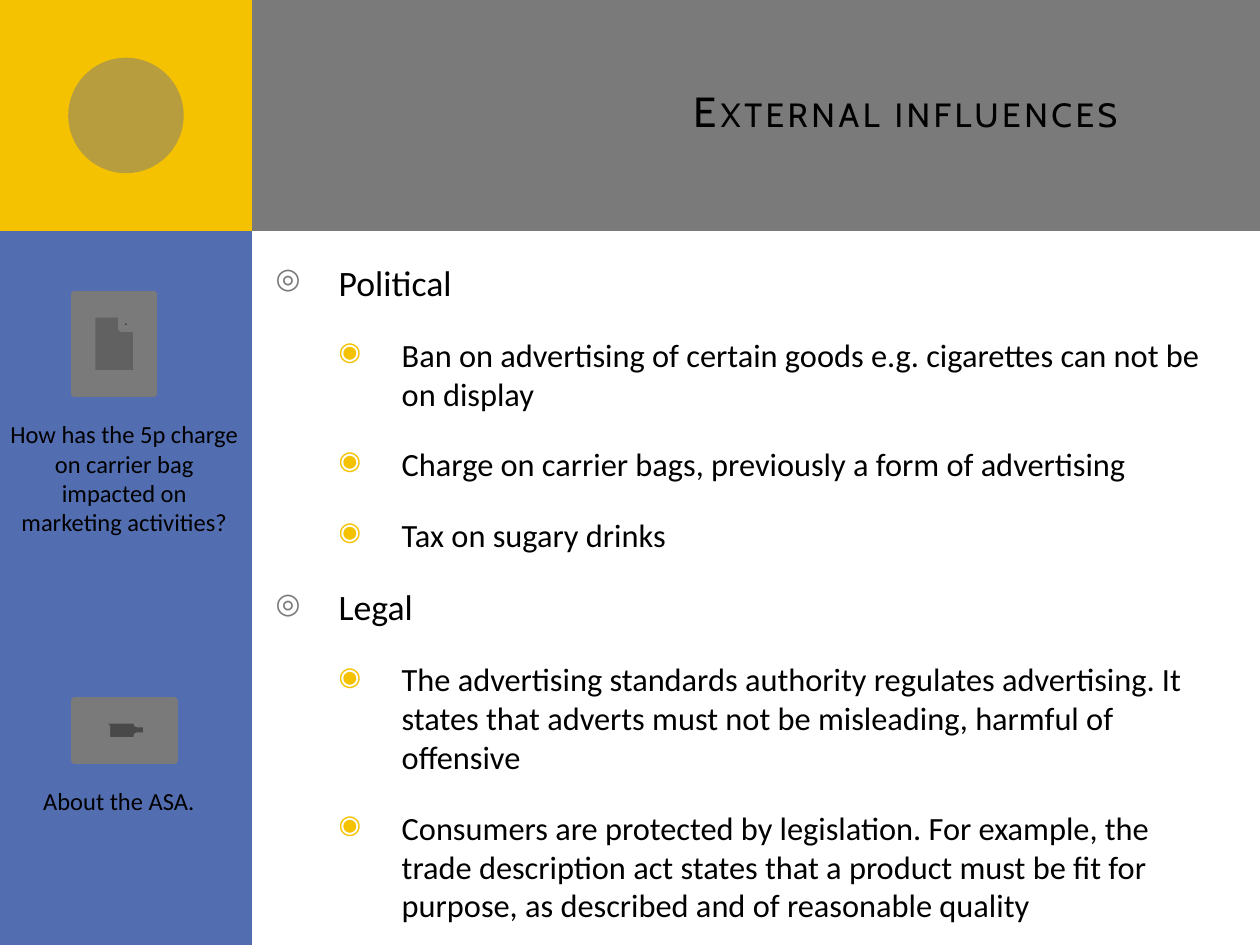
from lxml.etree import SubElement
from pptx import Presentation
from pptx.dml.color import RGBColor
from pptx.enum.shapes import MSO_SHAPE as Shape
from pptx.enum.text import MSO_ANCHOR as Anchor, PP_ALIGN as Align
from pptx.oxml.ns import qn
from pptx.util import Pt

GREY, BLUE, YELLOW, BLACK = "7A7A7A", "526DB0", "F5C201", "000000"
BODY_FONT, TITLE_FONT = "Calibri", "Cabin"
INDENT = 36

# Bullet glyph, bullet colour and text size for each outline level
LEVELS = [("◎", GREY, 20.4), ("◉", YELLOW, 18.5)]


def color(hex_string):
    return RGBColor.from_string(hex_string)


class SlideBuilder:
    def __init__(self, slide):
        self.slide = slide

    def shape(self, kind, left, top, width, height, fill, alpha=None, line=None):
        shape = self.slide.shapes.add_shape(
            kind, Pt(left), Pt(top), Pt(width), Pt(height))
        shape.shadow.inherit = False
        shape.fill.solid()
        shape.fill.fore_color.rgb = color(fill)
        if alpha is not None:
            fill_color = shape.fill._xPr.find(".//" + qn("a:srgbClr"))
            SubElement(fill_color, qn("a:alpha"), val=str(alpha * 1000))
        if line is None:
            shape.line.fill.background()
        else:
            shape.line.color.rgb = color(fill)
            shape.line.width = Pt(line)
        return shape

    def text_frame(self, left, top, width, height, anchor=Anchor.TOP):
        box = self.slide.shapes.add_textbox(
            Pt(left), Pt(top), Pt(width), Pt(height))
        frame = box.text_frame
        frame.word_wrap = True
        frame.vertical_anchor = anchor
        return frame

    def format_runs(self, paragraph, size, font=BODY_FONT):
        for run in paragraph.runs:
            run.font.name = font
            run.font.size = Pt(size)
            run.font.color.rgb = color(BLACK)

    def title(self, text, left, top, width, height):
        frame = self.text_frame(left, top, width, height, Anchor.MIDDLE)
        frame.text = text
        paragraph = frame.paragraphs[0]
        paragraph.alignment = Align.RIGHT
        self.format_runs(paragraph, 24, TITLE_FONT)
        for run in paragraph.runs:
            properties = run.font._element
            properties.set("cap", "small")
            properties.set("spc", "200")

    def caption(self, text, left, top, width, height):
        frame = self.text_frame(left, top, width, height)
        frame.text = text
        frame.paragraphs[0].alignment = Align.CENTER
        self.format_runs(frame.paragraphs[0], 14)

    def outline(self, items, left, top, width, height):
        frame = self.text_frame(left, top, width, height)
        frame.text = "\n".join(text for level, text in items)
        for paragraph, (level, text) in zip(frame.paragraphs, items):
            glyph, glyph_color, size = LEVELS[level]
            paragraph.level = level
            paragraph.space_before = Pt(18)
            self.format_runs(paragraph, size)
            self.bullet(paragraph, glyph, glyph_color, INDENT * (level + 1))

    def bullet(self, paragraph, glyph, glyph_color, margin):
        properties = paragraph._p.get_or_add_pPr()
        properties.set("marL", str(Pt(margin)))
        properties.set("indent", str(Pt(-INDENT)))
        bullet_color = SubElement(properties, qn("a:buClr"))
        SubElement(bullet_color, qn("a:srgbClr"), val=glyph_color)
        SubElement(properties, qn("a:buSzPct"), val="80000")
        SubElement(properties, qn("a:buChar"), char=glyph)


def main():
    presentation = Presentation()
    presentation.slide_width, presentation.slide_height = Pt(720), Pt(540)
    slide = presentation.slides.add_slide(presentation.slide_layouts[6])
    builder = SlideBuilder(slide)

    # Header band, sidebar and corner
    header, sidebar, circle = 132, 144, 66
    builder.shape(Shape.RECTANGLE, 36, 0, 684, header, GREY)
    builder.shape(Shape.RECTANGLE, 0, 0, sidebar, 540, BLUE)
    builder.shape(Shape.RECTANGLE, 0, 0, sidebar, header, YELLOW)
    builder.shape(Shape.OVAL, (sidebar - circle) / 2, (header - circle) / 2,
                  circle, circle, GREY, alpha=50)

    # Title and outline
    builder.title("External influences", 192, 18, 492, 90)
    builder.outline([
        (0, "Political"),
        (1, "Ban on advertising of certain goods e.g. cigarettes can not be "
            "on display"),
        (1, "Charge on carrier bags, previously a form of advertising"),
        (1, "Tax on sugary drinks"),
        (0, "Legal"),
        (1, "The advertising standards authority regulates advertising. It "
            "states that adverts must not be misleading, harmful of offensive"),
        (1, "Consumers are protected by legislation. For example, the trade "
            "description act states that a product must be fit for purpose, "
            "as described and of reasonable quality"),
    ], 150.5, 145.5, 556, 357)

    # Sidebar buttons and captions
    builder.shape(Shape.ACTION_BUTTON_DOCUMENT, 42.5, 168, 45.5, 57, GREY, line=4)
    builder.caption("How has the 5p charge on carrier bag impacted on "
                    "marketing activities?", -1.5, 236, 145, 75)
    builder.shape(Shape.ACTION_BUTTON_MOVIE, 42.5, 400.5, 57, 34, GREY, line=4)
    builder.caption("About the ASA.", 3, 445.5, 130, 24.5)

    presentation.save("out.pptx")


if __name__ == "__main__":
    main()
